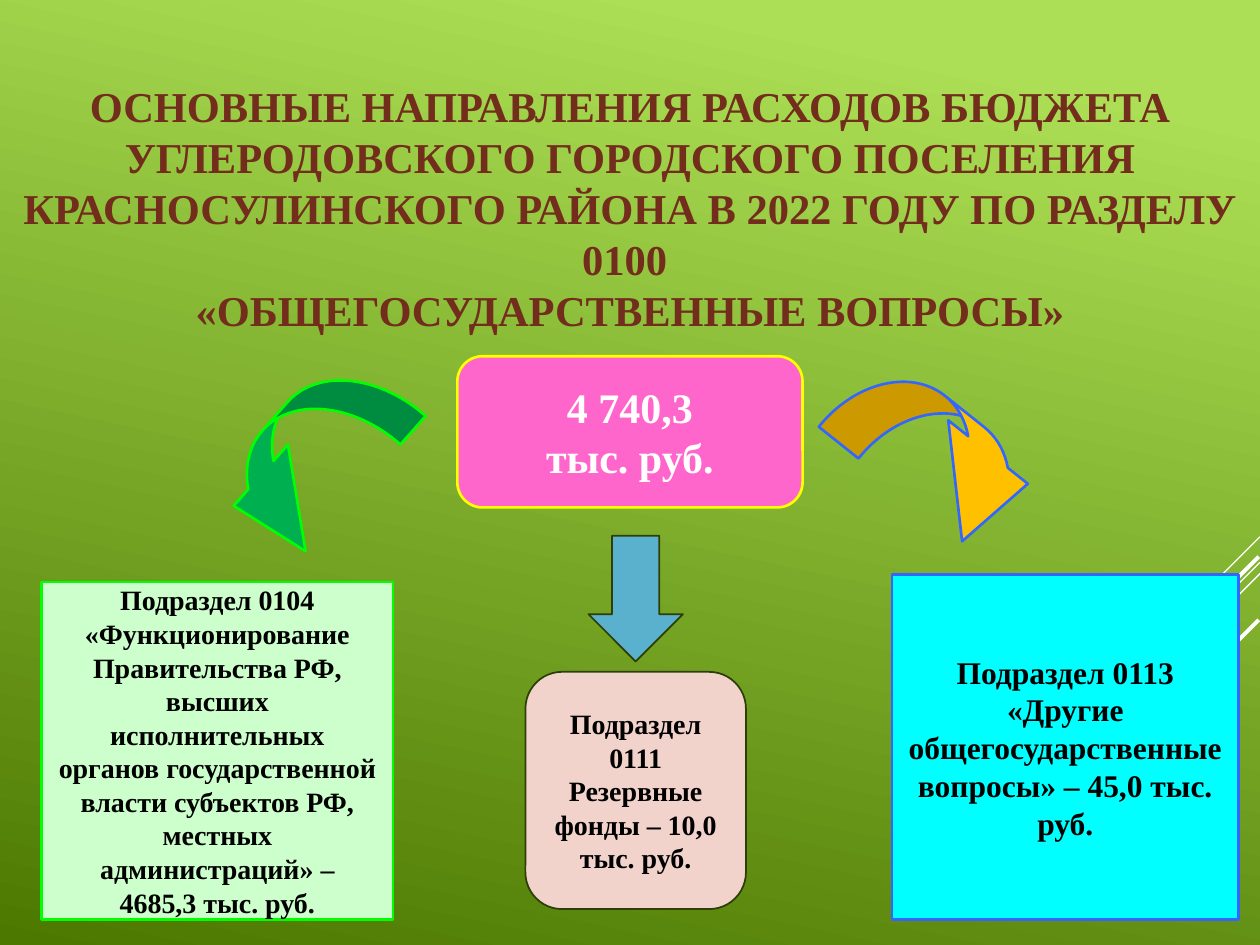
from lxml.etree import SubElement as Sub
from pptx import Presentation
from pptx.dml.color import RGBColor as Rgb
from pptx.enum.shapes import MSO_CONNECTOR as Link, MSO_SHAPE as Form
from pptx.enum.text import MSO_ANCHOR as Anchor, PP_ALIGN as Align
from pptx.oxml.ns import qn
from pptx.util import Inches, Pt

WIDE, HIGH = Inches(10), Inches(7.5)
FONT = "Times New Roman"
HUES = {
    "top": "ACDF55", "base": "4C7800", "white": "FFFFFF", "black": "000000",
    "title": "722D1D", "pink": "FF66CC", "yellow": "FFFF00", "mint": "CCFFCC",
    "lime": "00FF00", "cyan": "00FFFF", "blue": "3366FF", "gold": "FFC000",
    "green": "00B050", "sky": "59B1CD", "olive": "2E3E07", "rose": "F2D3CC",
}


def hue(name):
    """Return the named colour."""
    return Rgb.from_string(HUES[name])


def place(left, top, width, height):
    """Turn percent shares of the slide into lengths."""
    return [int(share * full / 100) for share, full in
            zip((left, top, width, height), (WIDE, HIGH, WIDE, HIGH))]


def paint(slide):
    """Fill the background with a slanted gradient."""
    fill = slide.background.fill
    fill.gradient()
    fill.gradient_angle = 258
    for stop, name, spot in zip(fill.gradient_stops, ("top", "base"), (0.1, 1)):
        stop.color.rgb = hue(name)
        stop.position = spot


def streak(slide, right, top, reach, weight):
    """Draw a white line falling leftwards at 45 degrees."""
    x, y, run, drop = place(right, top, reach, reach * WIDE / HIGH)
    line = slide.shapes.add_connector(Link.STRAIGHT, x, y, x - run, y + drop)
    line.line.color.rgb = hue("white")
    line.line.width = Pt(weight)
    Sub(line._element.spPr, qn("a:effectLst"))


def write(shape, lines, size, tint, side=0.1, edge=0.05, lead=None):
    """Write centred bold paragraphs, with a tuple split by line breaks."""
    frame = shape.text_frame
    frame.word_wrap = True
    frame.vertical_anchor = Anchor.MIDDLE
    frame.margin_left = frame.margin_right = Inches(side)
    frame.margin_top = frame.margin_bottom = Inches(edge)
    for i, line in enumerate(lines):
        para = frame.add_paragraph() if i else frame.paragraphs[0]
        para.alignment = Align.CENTER
        if lead:
            para.line_spacing = Pt(lead)
        for j, part in enumerate(line if isinstance(line, tuple) else (line,)):
            if j:
                para.add_line_break()
            run = para.add_run()
            run.text = part
            run.font.name = FONT
            run.font.size = Pt(size)
            run.font.bold = True
            run.font.color.rgb = hue(tint)


def draw(slide, form, area, fill, edge, weight=1.5, turn=0, bends=()):
    """Add a filled and outlined preset shape."""
    shape = slide.shapes.add_shape(form, *place(*area))
    shape.shadow.inherit = False
    shape.fill.solid()
    shape.fill.fore_color.rgb = hue(fill)
    shape.line.color.rgb = hue(edge)
    shape.line.width = Pt(weight)
    shape.rotation = turn
    for i, bend in enumerate(bends):
        shape.adjustments[i] = bend
    return shape


def main():
    """Build the slide and save it."""
    deck = Presentation()
    deck.slide_width, deck.slide_height = WIDE, HIGH
    slide = deck.slides.add_slide(deck.slide_layouts[6])
    paint(slide)
    for mark in ((100, 56.8, 8.3, 0.75), (100, 59.5, 27, 0.75),
                 (100, 60.7, 17.2, 0.75), (99.9, 58.9, 15.7, 2.25),
                 (99.9, 65.6, 11.4, 2.25)):
        streak(slide, *mark)

    title = slide.shapes.add_textbox(*place(0, 8, 100, 28))
    write(title, [(
        "ОСНОВНЫЕ НАПРАВЛЕНИЯ РАСХОДОВ БЮДЖЕТА УГЛЕРОДОВСКОГО ГОРОДСКОГО "
        "ПОСЕЛЕНИЯ КРАСНОСУЛИНСКОГО РАЙОНА В 2022 ГОДУ ПО РАЗДЕЛУ 0100 ",
        "«ОБЩЕГОСУДАРСТВЕННЫЕ ВОПРОСЫ»")], 24.3, "title", lead=29.1)

    total = draw(slide, Form.ROUNDED_RECTANGLE, (36.3, 37.7, 27.4, 16),
                 "pink", "yellow")
    write(total, ["4 740,3", "тыс. руб."], 24, "white", 0.14)

    left = draw(slide, Form.RECTANGLE, (3.3, 61.6, 27.9, 35.7), "mint", "lime")
    write(left, [
        "Подраздел 0104",
        "«Функционирование Правительства РФ, высших исполнительных органов "
        "государственной власти субъектов РФ, местных администраций» –",
        "4685,3 тыс. руб."], 16, "black", 0.12, 0)

    right = draw(slide, Form.RECTANGLE, (70.8, 60.8, 27.5, 36.5), "cyan", "blue")
    write(right, [
        "Подраздел 0113",
        "«Другие общегосударственные вопросы» – 45,0 тыс. руб."],
        18, "black", 0.12, 0)

    draw(slide, Form.CURVED_DOWN_ARROW, (65.5, 43.2, 18.6, 10.9), "gold", "blue",
         turn=38.6, bends=(0.493, 0.988, 0.834))
    draw(slide, Form.CURVED_UP_ARROW, (15.8, 42.9, 17.6, 11.9), "green", "lime",
         turn=131.6, bends=(0.338, 0.727, 0.747))
    draw(slide, Form.DOWN_ARROW, (46.7, 56.7, 7.5, 13.3), "sky", "olive", 1)

    fund = draw(slide, Form.ROUNDED_RECTANGLE, (41.7, 71.1, 17.5, 25.1),
                "rose", "olive", 1)
    write(fund, ["Подраздел 0111", "Резервные фонды – 10,0 тыс. руб."],
          16, "black")
    deck.save("out.pptx")


if __name__ == "__main__":
    main()
